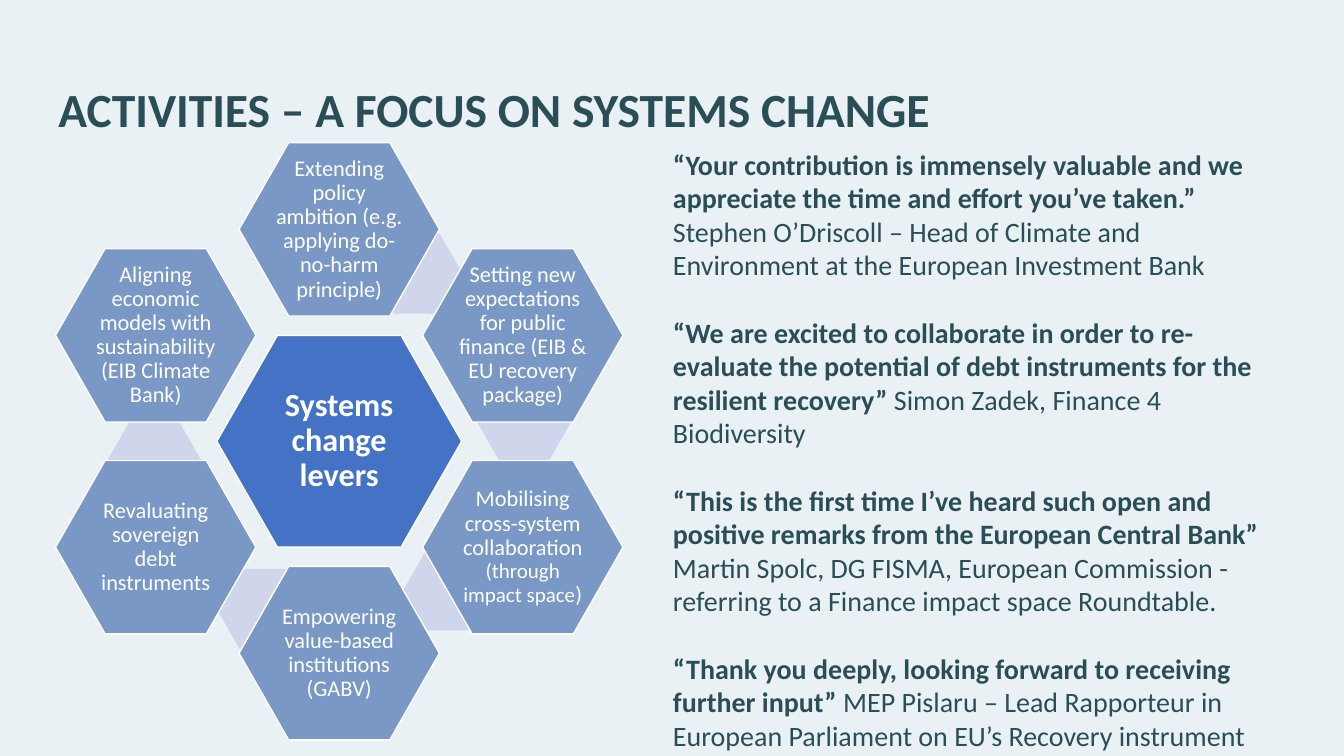
import math
from dataclasses import dataclass

import pptx
import pptx.dml.color
import pptx.enum.shapes
import pptx.enum.text
import pptx.util

Cm = pptx.util.Cm


@dataclass(frozen=True)
class Theme:
    """Colours and type sizes of the slide."""
    font: str = "Calibri"
    background: str = "EAF1F5"
    ink: str = "294E56"
    white: str = "FFFFFF"
    core: str = "4472C4"
    lever: str = "7998C6"
    link: str = "CFD5EA"
    title_size: int = 34
    quote_size: int = 20
    core_size: int = 23
    lever_size: int = 16
    small_size: int = 15


class Deck:
    """Holds the theme and the current slide."""

    def __init__(self, prs, theme):
        self.theme = theme
        self.s = prs.slides.add_slide(prs.slide_layouts[6])
        fill = self.s.background.fill
        fill.solid()
        fill.fore_color.rgb = self.rgb(theme.background)

    def rgb(self, colour):
        return pptx.dml.color.RGBColor.from_string(colour)

    def runs(self, p, parts, colour):
        for text, size, bold in parts:
            r = p.add_run()
            r.text = text
            r.font.name = self.theme.font
            r.font.size = pptx.util.Pt(size)
            r.font.bold = bold
            r.font.color.rgb = self.rgb(colour)

    def text(self, left, top, width, height, paragraphs, gap=0):
        sp = self.s.shapes.add_textbox(Cm(left), Cm(top), Cm(width), Cm(height))
        tf = sp.text_frame
        tf.word_wrap = True
        tf.auto_size = pptx.enum.text.MSO_AUTO_SIZE.SHAPE_TO_FIT_TEXT
        for i, parts in enumerate(paragraphs):
            p = tf.add_paragraph() if i else tf.paragraphs[0]
            if i:
                p.space_before = pptx.util.Pt(gap)
            self.runs(p, parts, self.theme.ink)

    def hexagon(self, x, y, width, height, colour, parts=(), inset=0.05):
        sp = self.s.shapes.add_shape(
            pptx.enum.shapes.MSO_SHAPE.HEXAGON,
            Cm(x - width / 2), Cm(y - height / 2), Cm(width), Cm(height))
        sp.shadow.inherit = False
        sp.adjustments[0] = 0.286
        sp.fill.solid()
        sp.fill.fore_color.rgb = self.rgb(colour)
        if not parts:
            sp.line.fill.background()
            return
        sp.line.color.rgb = self.rgb(self.theme.white)
        sp.line.width = pptx.util.Pt(1)
        tf = sp.text_frame
        tf.word_wrap = True
        tf.vertical_anchor = pptx.enum.text.MSO_ANCHOR.MIDDLE
        tf.margin_left = tf.margin_right = Cm(inset)
        tf.margin_top = tf.margin_bottom = Cm(inset)
        p = tf.paragraphs[0]
        p.alignment = pptx.enum.text.PP_ALIGN.CENTER
        p.line_spacing = 0.9
        self.runs(p, parts, self.theme.white)


CENTRE_X, CENTRE_Y, RADIUS = 8.55, 11.12, 5.34
LINK_OFFSETS = [(1.94, -4.22), (4.66, -0.46), (2.78, 3.76), (-1.92, 4.22), (-4.66, 0.46)]
LEVERS = [
    "Extending policy ambition (e.g. applying do-no-harm principle)",
    "Setting new expectations for public finance (EIB & EU recovery package)",
    "Mobilising cross-system collaboration |(through impact space|)",
    "Empowering value-based institutions (GABV)",
    "Revaluating sovereign debt instruments",
    "Aligning economic models with sustainability (EIB Climate Bank)",
]
QUOTES = [
    ("“Your contribution is immensely valuable and we appreciate the time and effort you’ve taken.” ",
     "Stephen O’Driscoll – Head of Climate and Environment at the European Investment Bank"),
    ("“We are excited to collaborate in order to re-evaluate the potential of debt instruments "
     "for the resilient recovery” ",
     "Simon Zadek, Finance 4 Biodiversity"),
    ("“This is the first time I’ve heard such open and positive remarks from the European Central Bank” ",
     "Martin Spolc, DG FISMA, European Commission - referring to a Finance impact space Roundtable."),
    ("“Thank you deeply, looking forward to receiving further input” ",
     "MEP Pislaru – Lead Rapporteur in European Parliament on EU’s Recovery instrument"),
]


def main():
    prs = pptx.Presentation()
    prs.slide_width, prs.slide_height = Cm(33.87), Cm(19.05)
    theme = Theme()
    deck = Deck(prs, theme)

    deck.text(1.22, 1.88, 24.59, 1.7,
              [[("ACTIVITIES – A FOCUS ON SYSTEMS CHANGE", theme.title_size, True)]])
    deck.text(16.71, 3.58, 15.49, 15.4,
              [[(quote, theme.quote_size, True), (speaker, theme.quote_size, False)]
               for quote, speaker in QUOTES], gap=24)

    for dx, dy in LINK_OFFSETS:
        deck.hexagon(CENTRE_X + dx, CENTRE_Y + dy, 2.34, 2.01, theme.link)
    deck.hexagon(CENTRE_X, CENTRE_Y, 6.17, 5.33, theme.core,
                 [("Systems change levers", theme.core_size, True)], inset=0.08)
    sizes = [theme.lever_size, theme.small_size, theme.lever_size]
    for i, lever in enumerate(LEVERS):
        angle = math.radians(60 * i - 90)
        parts = [(text, size, False) for text, size in zip(lever.split("|"), sizes)]
        deck.hexagon(CENTRE_X + RADIUS * math.cos(angle), CENTRE_Y + RADIUS * math.sin(angle),
                     5.05, 4.37, theme.lever, parts)

    prs.save("out.pptx")


if __name__ == "__main__":
    main()
